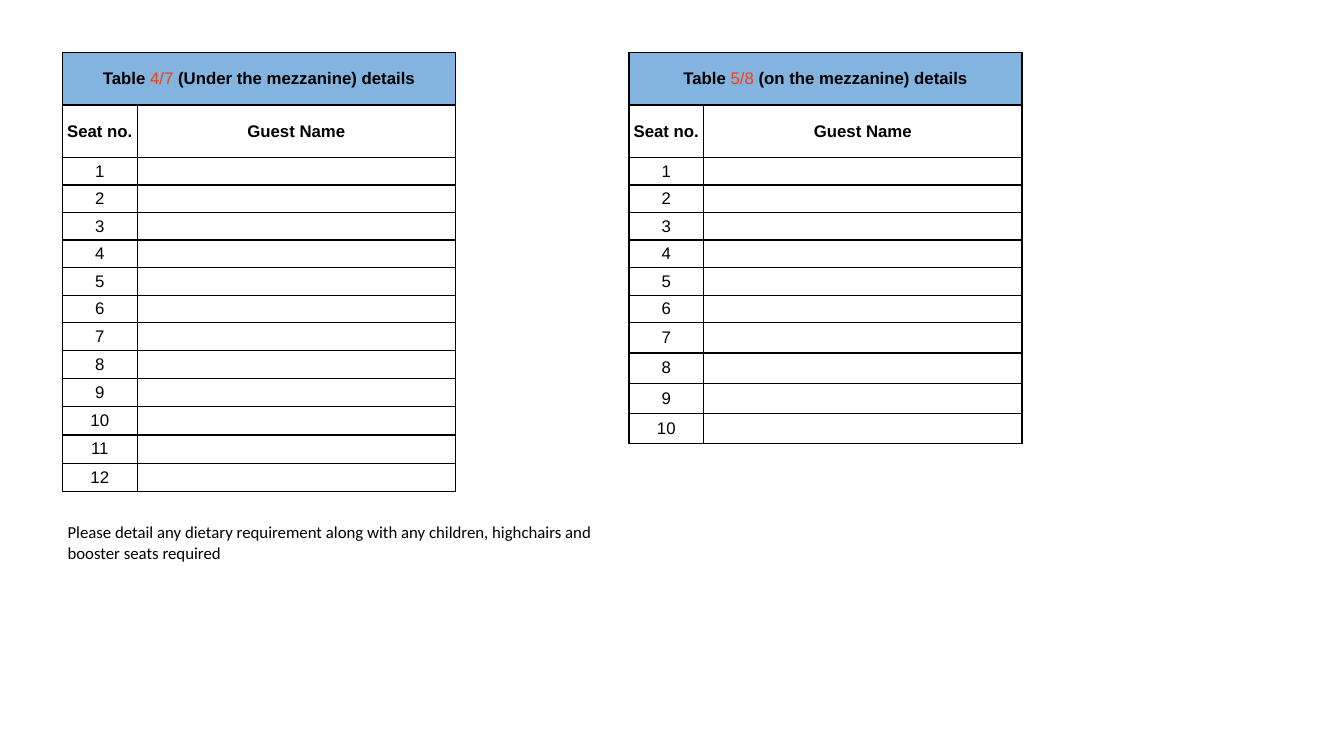
from lxml import etree
from pptx import Presentation
from pptx.dml.color import RGBColor
from pptx.enum.text import MSO_ANCHOR, PP_ALIGN
from pptx.oxml.ns import qn
from pptx.util import Pt

MIDDLE = MSO_ANCHOR.MIDDLE
CENTER = PP_ALIGN.CENTER

COLORS = {"ink": "000000", "band": "83B3DF", "mark": "F53F0E", "paper": "FFFFFF"}
SIZE = 12
LEFT, TOP = 44.64, 37.5
HEAD, SEAT = 37.5, 19.7
COLS = (53.3, 227.5)
CELL = {"margin_left": 0, "margin_right": 0, "margin_top": 0,
        "margin_bottom": 0, "vertical_anchor": MIDDLE}
# left edge, table number, place, seats, seats of normal height, height of the rest
PLANS = (
    (LEFT, "4/7 ", "(Under the mezzanine) details", 12, 7, 20.2),
    (449.3, "5/8 ", "(on the mezzanine) details", 10, 6, 21.6),
)
NOTE = ("Please detail any dietary requirement along with any children, "
        "highchairs and booster seats required")


def color(name):
    return RGBColor.from_string(COLORS[name])


def apply(item, values):
    for name, value in values.items():
        setattr(item, name, value)


def add_run(para, text, bold=False, ink="ink", face="Arial"):
    run = para.add_run()
    run.text = text
    apply(run.font, {"size": Pt(SIZE), "name": face, "bold": bold})
    run.font.color.rgb = color(ink)


def add_edges(cell):
    props = cell._tc.get_or_add_tcPr()
    for side in ("lnL", "lnR", "lnT", "lnB"):
        line = etree.SubElement(props, qn(f"a:{side}"), w=str(Pt(1)))
        fill = etree.SubElement(line, qn("a:solidFill"))
        etree.SubElement(fill, qn("a:srgbClr"), val=COLORS["ink"])


def fill_cell(cell, runs, band=False):
    """Format one cell; runs holds the arguments of add_run after the paragraph."""
    add_edges(cell)
    apply(cell, CELL)
    if band:
        cell.fill.solid()
        cell.fill.fore_color.rgb = color("band")
    else:
        cell.fill.background()
    para = cell.text_frame.paragraphs[0]
    para.alignment = CENTER
    for run in runs:
        add_run(para, *run)
    if not runs:
        # Keeps an empty row from growing to the default text size
        etree.SubElement(para._p, qn("a:endParaRPr"), sz=str(SIZE * 100))


def add_plan(slide, left, top, number, place, seats, normal, tail):
    heights = [HEAD] * 2 + [SEAT] * normal + [tail] * (seats - normal)
    frame = slide.shapes.add_table(len(heights), len(COLS), Pt(left), Pt(top),
                                   Pt(sum(COLS)), Pt(sum(heights)))
    table = frame.table
    apply(table, {"first_row": False, "horz_banding": False})
    for col, width in zip(table.columns, COLS):
        col.width = Pt(width)
    for row, height in zip(table.rows, heights):
        row.height = Pt(height)

    title = [("Table ", True), (number, False, "mark"), (place, True)]
    rows = [(title, []), ([("Seat no.", True)], [("Guest Name", True)])]
    rows += [([(str(seat),)], []) for seat in range(1, seats + 1)]
    table.cell(0, 0).merge(table.cell(0, 1))
    for r, row in enumerate(rows):
        for c, runs in enumerate(row):
            fill_cell(table.cell(r, c), runs, band=r == 0)


def add_note(slide, left, top, width, height):
    box = slide.shapes.add_textbox(Pt(left), Pt(top), Pt(width), Pt(height))
    box.fill.solid()
    box.fill.fore_color.rgb = color("paper")
    frame = box.text_frame
    apply(frame, {"word_wrap": True, "margin_left": Pt(3.6), "margin_right": Pt(3.6),
                  "margin_top": Pt(3.6), "margin_bottom": Pt(3.6)})
    add_run(frame.paragraphs[0], NOTE, face="Calibri")


def main():
    deck = Presentation()
    apply(deck, {"slide_width": Pt(960), "slide_height": Pt(540)})
    slide = deck.slides.add_slide(deck.slide_layouts[6])
    for left, *plan in PLANS:
        add_plan(slide, left, TOP, *plan)
    add_note(slide, LEFT, 369.4, 392.4, 36)
    deck.save("out.pptx")


if __name__ == "__main__":
    main()
